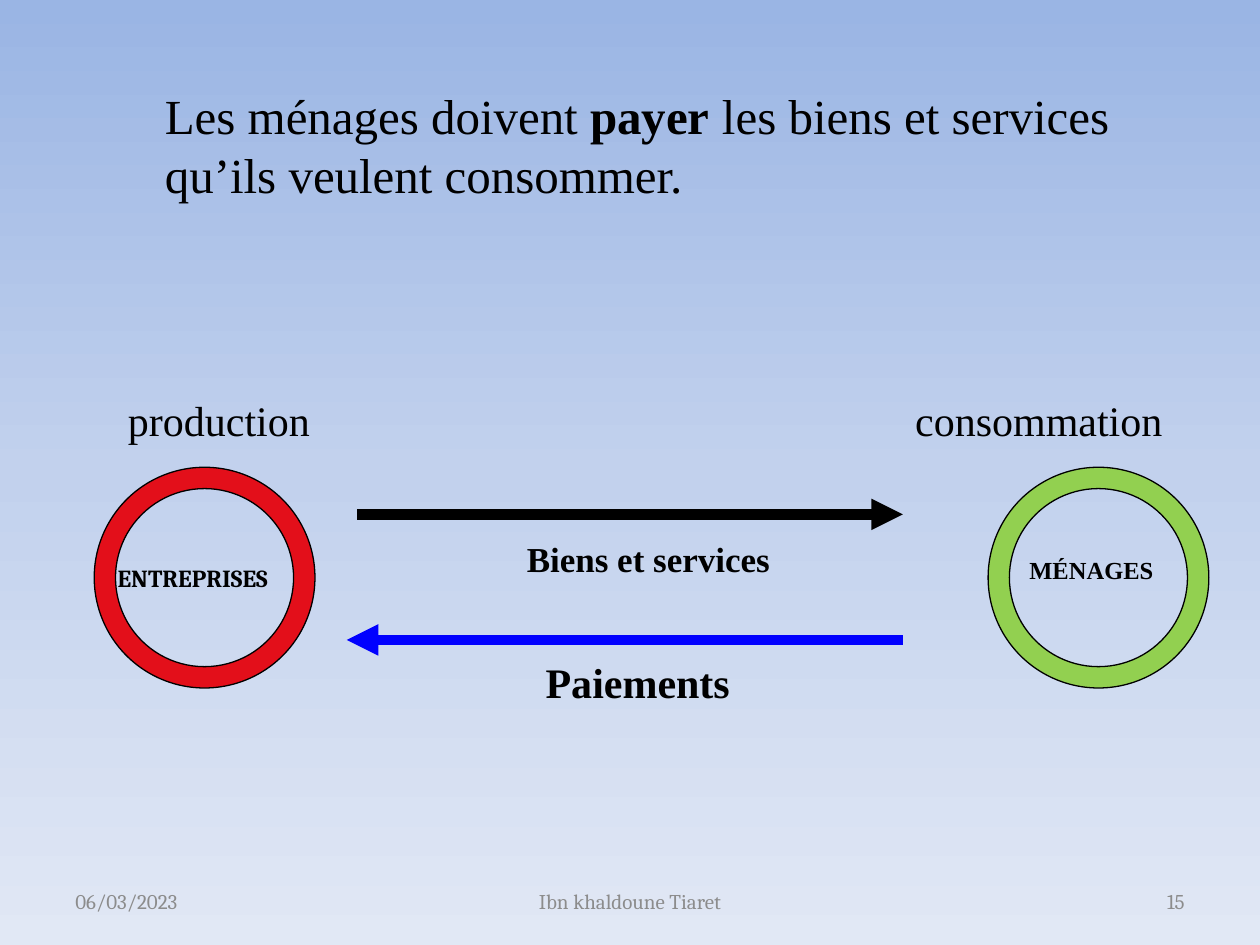
import copy

import lxml.etree
import pptx
import pptx.util
import pptx.dml.color
import pptx.enum.shapes
import pptx.enum.text
import pptx.oxml.ns

Cm = pptx.util.Cm
Pt = pptx.util.Pt
qn = pptx.oxml.ns.qn
Align = pptx.enum.text.PP_ALIGN
Anchor = pptx.enum.text.MSO_ANCHOR

COLORS = {
    "text": "000000",
    "footer": "8C8C8C",
    "firms": "E30F1A",
    "households": "92D050",
    "goods": "000000",
    "payments": "0000FF",
}
SERIF, BODY = "Times New Roman", "Cambria"

BACKGROUND_STOPS = [(0, "9AB5E4"), (0.5, "C2D1ED"), (1, "E1E8F5")]
TITLE = [
    ("Les ménages doivent ", False),
    ("payer", True),
    (" les biens et services qu’ils veulent consommer.", False),
]
RINGS = [("firms", 1.9), ("households", 19.92)]
RING_TOP, RING_SIZE, RING_BAND = 9.42, 4.45, 0.43
ARROWS = [("goods", 7.2, 18.2, 10.37), ("payments", 18.2, 6.99, 12.9)]
LABELS = [
    ("consommation", 18.2, 7.82, 7.09, 1.28, 24, SERIF, False, True),
    ("production", 2.33, 7.82, 4.22, 1.28, 24, SERIF, False, False),
    ("Biens et services", 10.37, 10.72, 5.46, 1.11, 20, SERIF, True, False),
    ("ENTREPRISES", 2.12, 11.23, 3.93, 0.85, 14, BODY, True, False),
    ("MÉNAGES", 20.5, 11.07, 3.02, 0.85, 14, SERIF, True, False),
    ("Paiements", 10.75, 13.11, 6.35, 1.28, 24, SERIF, True, True),
]
FOOTERS = [
    ("06/03/2023", 1.27, 5.93, Align.LEFT),
    ("Ibn khaldoune Tiaret", 8.68, 8.04, Align.CENTER),
    ("15", 18.2, 5.93, Align.RIGHT),
]


def rgb(value):
    return pptx.dml.color.RGBColor.from_string(value)


def format_run(run, size, font, color, bold):
    run.font.size = Pt(size)
    run.font.name = font
    run.font.bold = bold
    run.font.color.rgb = rgb(COLORS[color])


def paint_background(slide):
    fill = slide.background.fill
    fill.gradient()
    fill.gradient_angle = 270
    stop_list = slide._element.find(".//" + qn("a:gsLst"))
    stop_list.insert(1, copy.deepcopy(stop_list[0]))
    for stop, (position, color) in zip(fill.gradient_stops, BACKGROUND_STOPS):
        stop.position = position
        stop.color.rgb = rgb(color)


def add_title(slide):
    title = slide.shapes.title
    title.left, title.top, title.width, title.height = Cm(3.07), Cm(1.6), Cm(20.22), Cm(2.64)
    frame = title.text_frame
    frame.word_wrap = True
    frame.auto_size = pptx.enum.text.MSO_AUTO_SIZE.NONE
    frame.vertical_anchor = Anchor.TOP
    paragraph = frame.paragraphs[0]
    paragraph.alignment = Align.LEFT
    for text, bold in TITLE:
        run = paragraph.add_run()
        run.text = text
        format_run(run, 28, SERIF, "text", bold)


def add_ring(slide, color, left):
    ring = slide.shapes.add_shape(
        pptx.enum.shapes.MSO_SHAPE.DONUT, Cm(left), Cm(RING_TOP), Cm(RING_SIZE), Cm(RING_SIZE)
    )
    ring.adjustments[0] = RING_BAND / RING_SIZE
    ring.shadow.inherit = False
    ring.fill.solid()
    ring.fill.fore_color.rgb = rgb(COLORS[color])
    ring.line.color.rgb = rgb(COLORS["text"])
    ring.line.width = Pt(0.75)


def add_arrow(slide, color, start, end, height):
    arrow = slide.shapes.add_connector(
        pptx.enum.shapes.MSO_CONNECTOR.STRAIGHT, Cm(start), Cm(height), Cm(end), Cm(height)
    )
    arrow.line.color.rgb = rgb(COLORS[color])
    arrow.line.width = Pt(6)
    properties = arrow._element.spPr
    line = properties.find(qn("a:ln"))
    lxml.etree.SubElement(line, qn("a:tailEnd"), type="triangle")
    lxml.etree.SubElement(properties, qn("a:effectLst"))


def add_label(slide, text, left, top, width, height, size, font, bold, wrap,
              color="text", alignment=Align.LEFT, anchor=Anchor.TOP):
    box = slide.shapes.add_textbox(Cm(left), Cm(top), Cm(width), Cm(height))
    frame = box.text_frame
    frame.word_wrap = wrap
    frame.vertical_anchor = anchor
    frame.text = text
    paragraph = frame.paragraphs[0]
    paragraph.alignment = alignment
    format_run(paragraph.runs[0], size, font, color, bold)


def main():
    presentation = pptx.Presentation()
    presentation.slide_width, presentation.slide_height = Cm(25.4), Cm(19.05)
    slide = presentation.slides.add_slide(presentation.slide_layouts[5])
    paint_background(slide)
    add_title(slide)
    for ring in RINGS:
        add_ring(slide, *ring)
    for arrow in ARROWS:
        add_arrow(slide, *arrow)
    for label in LABELS:
        add_label(slide, *label)
    for text, left, width, alignment in FOOTERS:
        add_label(slide, text, left, 17.65, width, 1.02, 12, BODY, False, True,
                  "footer", alignment, Anchor.MIDDLE)
    presentation.save("out.pptx")


if __name__ == "__main__":
    main()
